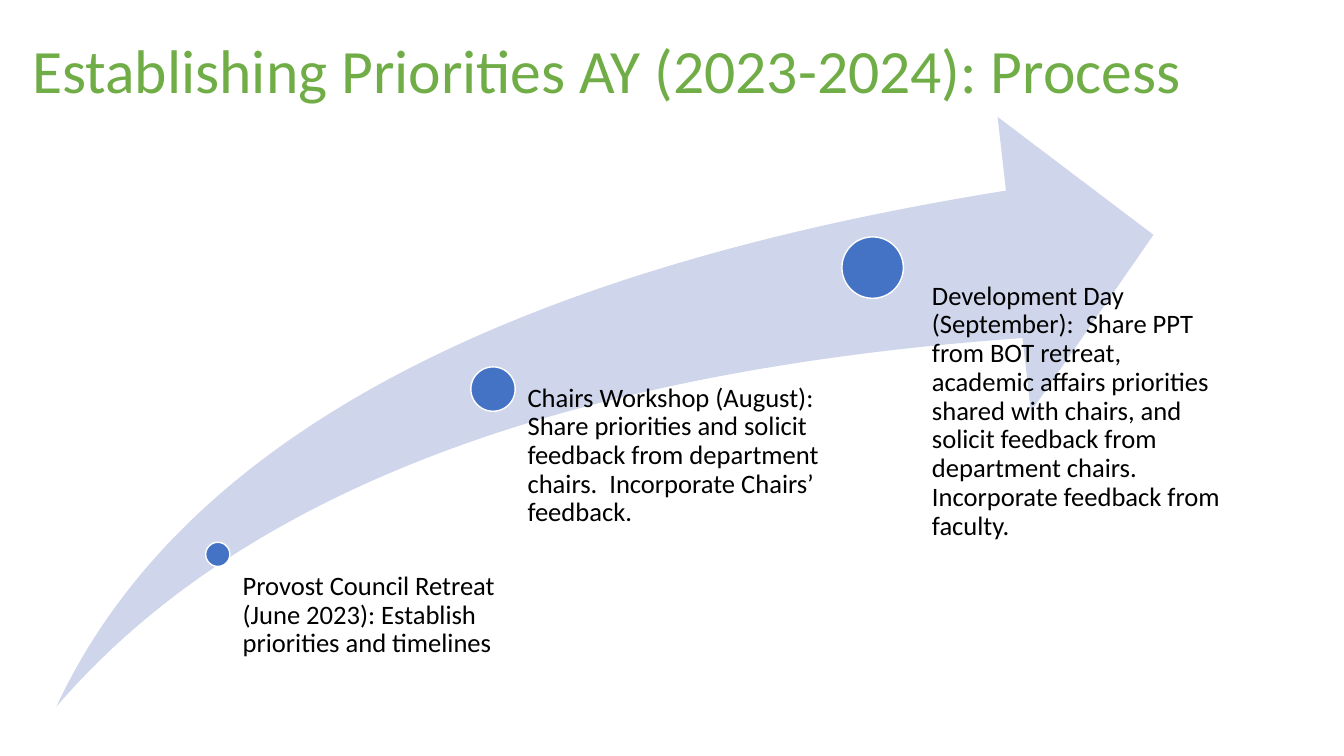
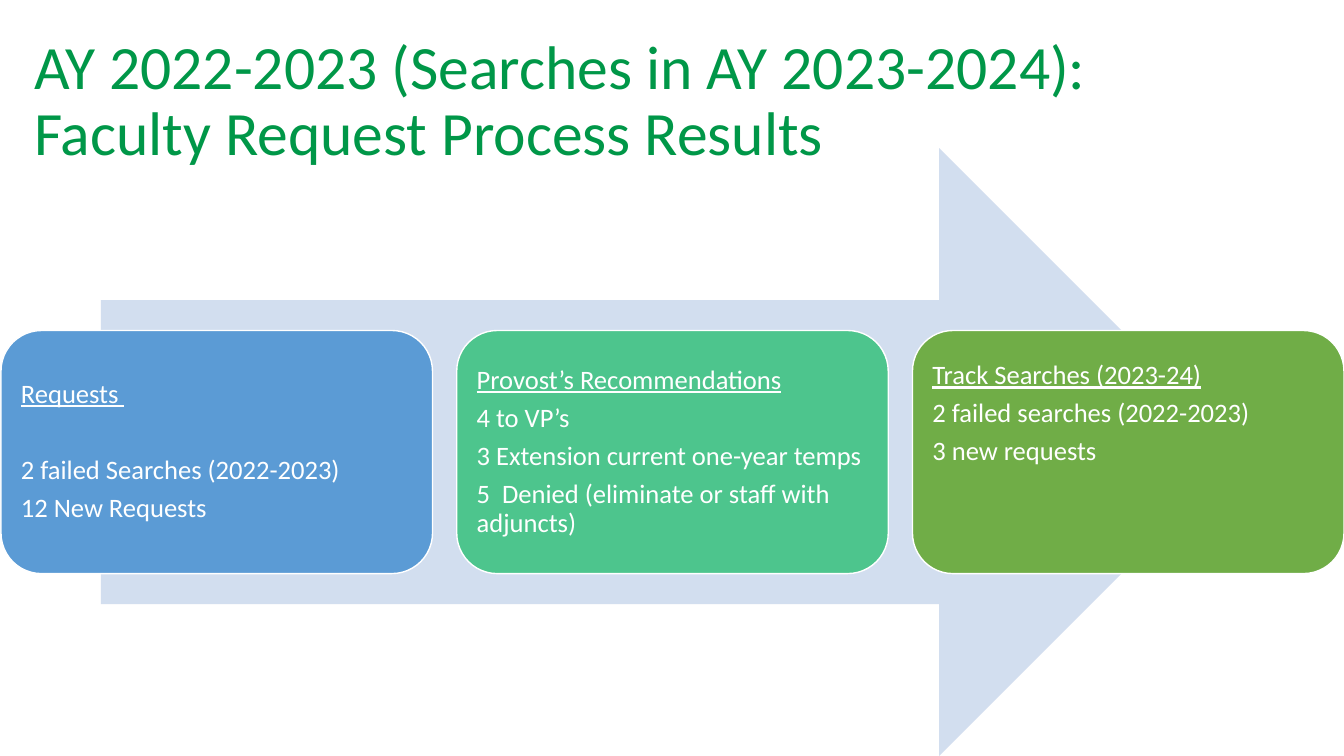
from collections import namedtuple

from pptx import Presentation
from pptx.dml.color import RGBColor
from pptx.enum.shapes import MSO_SHAPE as Preset
from pptx.enum.text import MSO_ANCHOR as Anchor, PP_ALIGN as Align
from pptx.util import Inches, Pt

Box = namedtuple("Box", "left top width height")
Milestone = namedtuple("Milestone", "dot_left dot_top diameter text_box text")
Card = namedtuple("Card", "fill heading heading_gap lines bottom_inset")

COLORS = {
    "light_green": "70AD47",
    "deep_green": "009748",
    "swoosh": "CFD5EA",
    "dot": "4472C4",
    "arrow": "D2DEEF",
    "blue": "5B9BD5",
    "mint": "4DC58D",
    "white": "FFFFFF",
    "black": "000000",
}
FONT = "Calibri"
TITLE_SIZE = 44
BODY_SIZE = 19
LINE_SPACING = 0.9
PARAGRAPH_GAP = 6.65
CARD_INSET = 0.08

MILESTONES = [
    Milestone(1.48, 4.22, 0.24, Box(1.72, 4.52, 2.81, 1.17),
              "Provost Council Retreat (June 2023): Establish priorities and timelines"),
    Milestone(4.11, 2.48, 0.44, Box(4.44, 2.65, 3.13, 3.18),
              "Chairs Workshop (August): Share priorities and solicit feedback from "
              "department chairs.  Incorporate Chairs’ feedback."),
    Milestone(7.79, 1.19, 0.61, Box(8.36, 1.64, 3.21, 4.07),
              "Development Day (September):  Share PPT from BOT retreat, academic affairs "
              "priorities shared with chairs, and solicit feedback from department chairs.  "
              "Incorporate feedback from faculty."),
]
CARDS = [
    Card("blue", "Requests ", 34, ["2 failed Searches (2022-2023)", "12 New Requests"], CARD_INSET),
    Card("mint", "Provost’s Recommendations", PARAGRAPH_GAP,
         ["4 to VP’s", "3 Extension current one-year temps",
          "5  Denied (eliminate or staff with adjuncts)"], CARD_INSET),
    Card("light_green", "Track Searches (2023-24)", PARAGRAPH_GAP,
         ["2 failed searches (2022-2023)", "3 new requests"], 0.83),
]


def color(name):
    """Return the named colour."""
    return RGBColor.from_string(COLORS[name])


def inside(outer, box):
    """Shift a box given relative to the outer box onto the slide."""
    return Box(outer.left + box.left, outer.top + box.top, box.width, box.height)


def add_shape(slide, preset, box, fill, line=None):
    """Add a flat preset shape with an optional thin outline."""
    shape = slide.shapes.add_shape(preset, *map(Inches, box))
    shape.shadow.inherit = False
    shape.fill.solid()
    shape.fill.fore_color.rgb = color(fill)
    if line:
        shape.line.color.rgb = color(line)
        shape.line.width = Pt(1)
    else:
        shape.line.fill.background()
    return shape


def set_frame(frame, insets, anchor):
    """Set wrapping, anchor and left, top, right, bottom insets."""
    frame.word_wrap = True
    frame.vertical_anchor = anchor
    (frame.margin_left, frame.margin_top,
     frame.margin_right, frame.margin_bottom) = map(Inches, insets)


def write(paragraph, text, size, ink, gap=0, underline=False):
    """Write one run into a left-aligned paragraph."""
    paragraph.alignment = Align.LEFT
    paragraph.line_spacing = LINE_SPACING
    paragraph.space_after = Pt(gap)
    run = paragraph.add_run()
    run.text = text
    run.font.name = FONT
    run.font.size = Pt(size)
    run.font.color.rgb = color(ink)
    run.font.underline = underline


def add_text(slide, box, text, size, ink, insets, anchor=Anchor.TOP):
    """Add a wrapped text box holding one paragraph."""
    frame = slide.shapes.add_textbox(*map(Inches, box)).text_frame
    set_frame(frame, insets, anchor)
    write(frame.paragraphs[0], text, size, ink)


def add_title(slide, box, text, ink):
    """Add the slide title."""
    add_text(slide, box, text, TITLE_SIZE, ink, (0.1, 0.05, 0.1, 0.05), Anchor.MIDDLE)


def add_timeline(slide, box, milestones):
    """Draw a rising arrow with growing dots and their captions."""
    swoosh = add_shape(slide, Preset.SWOOSH_ARROW, box, "swoosh")
    swoosh.adjustments[0] = 0.25
    swoosh.adjustments[1] = 0.25
    for milestone in milestones:
        diameter = milestone.diameter
        dot_box = Box(milestone.dot_left, milestone.dot_top, diameter, diameter)
        add_shape(slide, Preset.OVAL, inside(box, dot_box), "dot", "white")
        add_text(slide, inside(box, milestone.text_box), milestone.text,
                 BODY_SIZE, "black", (diameter * 0.53, 0, 0, 0))


def add_card(slide, box, card):
    """Draw a rounded card with an underlined heading and its lines."""
    shape = add_shape(slide, Preset.ROUNDED_RECTANGLE, box, card.fill, "white")
    frame = shape.text_frame
    set_frame(frame, (CARD_INSET, CARD_INSET, CARD_INSET, card.bottom_inset), Anchor.MIDDLE)
    write(frame.paragraphs[0], card.heading, BODY_SIZE, "white", card.heading_gap, True)
    for line in card.lines:
        write(frame.add_paragraph(), line, BODY_SIZE, "white", PARAGRAPH_GAP)


def add_process(slide, box, cards):
    """Draw a broad arrow with evenly spaced cards across the box."""
    arrow_width = box.width * 0.85
    arrow_left = (box.width - arrow_width) / 2
    add_shape(slide, Preset.RIGHT_ARROW,
              inside(box, Box(arrow_left, 0, arrow_width, box.height)), "arrow")
    width, height, gap = 4.28, box.height * 0.4, 0.24
    for index, card in enumerate(cards):
        card_box = Box(0.01 + index * (width + gap), box.height * 0.3, width, height)
        add_card(slide, inside(box, card_box), card)


def main():
    """Build and save the presentation."""
    presentation = Presentation()
    presentation.slide_width = Inches(13.33)
    presentation.slide_height = Inches(7.5)
    blank = presentation.slide_layouts[6]

    slide = presentation.slides.add_slide(blank)
    add_title(slide, Box(0.22, 0, 12.3, 1.45),
              "Establishing Priorities AY (2023-2024): Process", "light_green")
    add_timeline(slide, Box(0.56, 1.16, 10.88, 5.85), MILESTONES)

    slide = presentation.slides.add_slide(blank)
    add_title(slide, Box(0.24, 0.29, 11.5, 1.45),
              "AY 2022-2023 (Searches in AY 2023-2024): Faculty Request Process Results",
              "deep_green")
    add_process(slide, Box(0, 1.47, 13.33, 6.03), CARDS)

    presentation.save("out.pptx")


if __name__ == "__main__":
    main()
